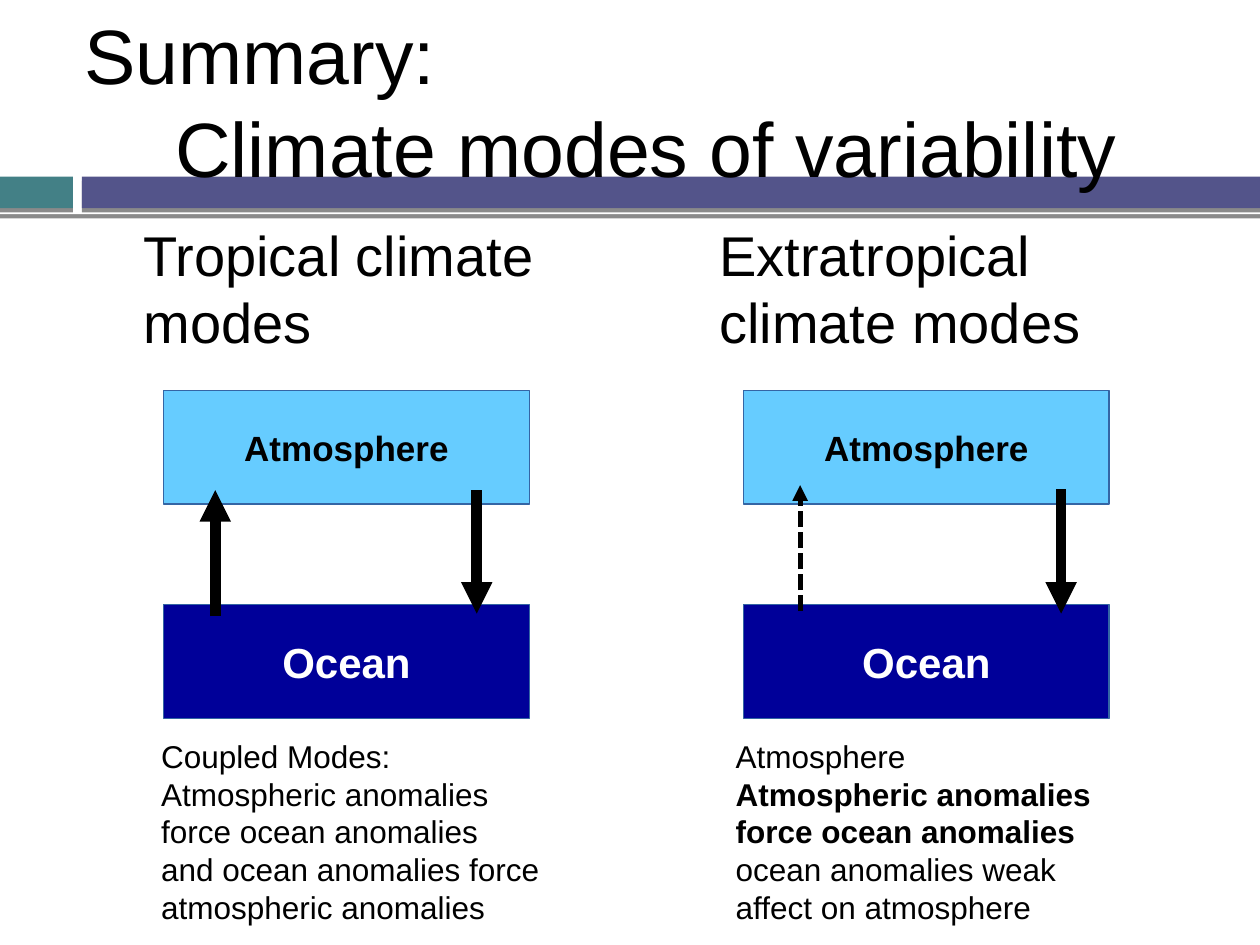
from lxml.etree import SubElement
from pptx import Presentation
from pptx.dml.color import RGBColor
from pptx.enum.dml import MSO_LINE
from pptx.enum.shapes import MSO_CONNECTOR, MSO_SHAPE
from pptx.enum.text import MSO_ANCHOR, MSO_AUTO_SIZE, PP_ALIGN
from pptx.oxml.ns import qn
from pptx.util import Cm, Pt


def color(value):
    return RGBColor.from_string(value)


def add_element(parent, tag, **attributes):
    return SubElement(parent, qn(tag), attributes)


class ClimateSlide:
    font = "Arial"
    black = "000000"
    white = "FFFFFF"
    outline = "3465A4"

    def __init__(self, page):
        self.page = page

    def add_text(self, para, text, size, ink=black, bold=False):
        for number, line in enumerate(text.split("\n")):
            if number:
                para.add_line_break()
            span = para.add_run()
            span.text = line
            span.font.name = self.font
            span.font.size = Pt(size)
            span.font.bold = bold
            span.font.color.rgb = color(ink)

    def place(self, index, left, top, width, height):
        """Position a template placeholder above the bars and clear its margins."""
        holder = self.page.placeholders[index]
        holder.left, holder.top = Cm(left), Cm(top)
        holder.width, holder.height = Cm(width), Cm(height)
        holder.element.getparent().append(holder.element)
        frame = holder.text_frame
        frame.auto_size = MSO_AUTO_SIZE.NONE
        frame.margin_left = frame.margin_right = 0
        frame.margin_top = frame.margin_bottom = 0
        return frame

    def title(self, first, second):
        frame = self.place(0, 1.7, 0.28, 22.66, 3.48)
        frame.vertical_anchor = MSO_ANCHOR.MIDDLE
        lines = ((frame.paragraphs[0], first, PP_ALIGN.LEFT),
                 (frame.add_paragraph(), second, PP_ALIGN.CENTER))
        for para, text, alignment in lines:
            para.alignment = alignment
            self.add_text(para, text, 44)

    def heading(self, index, left, text):
        para = self.place(index, left, 4.45, 11.05, 12.5).paragraphs[0]
        props = para._p.get_or_add_pPr()
        props.set("marL", str(Cm(1.19)))
        props.set("indent", str(Cm(-0.89)))
        bullet_color = add_element(props, "a:buClr")
        add_element(bullet_color, "a:srgbClr", val=self.white)
        add_element(props, "a:buSzPct", val="45000")
        add_element(props, "a:buChar", char="●")
        para.space_before = Pt(0)
        self.add_text(para, text, 32)

    def rectangle(self, left, top, width, height, fill):
        box = self.page.shapes.add_shape(
            MSO_SHAPE.RECTANGLE, Cm(left), Cm(top), Cm(width), Cm(height))
        box.shadow.inherit = False
        box.fill.solid()
        box.fill.fore_color.rgb = color(fill)
        return box

    def bar(self, left, top, width, height, fill):
        box = self.rectangle(left, top, width, height, fill)
        box.line.fill.background()
        effects = box.element.spPr.find(qn("a:effectLst"))
        shadow = add_element(effects, "a:outerShdw", blurRad="0", dist=str(Pt(2.4)),
                             dir="5400000", algn="ctr", rotWithShape="0")
        tint = add_element(shadow, "a:srgbClr", val=self.black)
        add_element(tint, "a:alpha", val="45000")

    def block(self, left, top, text, size, fill, ink):
        box = self.rectangle(left, top, 7.37, 2.29, fill)
        box.line.color.rgb = color(self.outline)
        box.line.width = Pt(0.75)
        frame = box.text_frame
        frame.word_wrap = False
        frame.vertical_anchor = MSO_ANCHOR.MIDDLE
        para = frame.paragraphs[0]
        para.alignment = PP_ALIGN.CENTER
        self.add_text(para, text, size, ink, bold=True)

    def arrow(self, x, start, end, width=6, dash=None):
        arrow = self.page.shapes.add_connector(
            MSO_CONNECTOR.STRAIGHT, Cm(x), Cm(start), Cm(x), Cm(end))
        arrow.line.color.rgb = color(self.black)
        arrow.line.width = Pt(width)
        if dash is not None:
            arrow.line.dash_style = dash
        props = arrow.element.spPr
        add_element(props.find(qn("a:ln")), "a:tailEnd", type="triangle")
        add_element(props, "a:effectLst")

    def caption(self, left, width, lines):
        box = self.page.shapes.add_textbox(Cm(left), Cm(14.73), Cm(width), Cm(4.52))
        frame = box.text_frame
        frame.word_wrap = True
        for number, (text, bold) in enumerate(lines):
            para = frame.add_paragraph() if number else frame.paragraphs[0]
            self.add_text(para, text, 18, bold=bold)


def main():
    deck = Presentation()
    deck.slide_width, deck.slide_height = Cm(25.4), Cm(19.05)
    slide = ClimateSlide(deck.slides.add_slide(deck.slide_layouts[3]))

    # Banner
    slide.bar(0, 3.43, 25.4, 0.89, "FFFFFF")
    slide.bar(0, 3.56, 1.47, 0.64, "438086")
    slide.bar(1.65, 3.56, 23.75, 0.64, "53548A")

    # Title and column headings
    slide.title("Summary:", "Climate modes of variability")
    slide.heading(1, 1.7, "Tropical climate modes")
    slide.heading(2, 13.31, "Extratropical climate modes")

    # Atmosphere and ocean blocks
    for left in (3.3, 14.99):
        slide.block(left, 7.87, "Atmosphere", 20, "66CCFF", "000000")
        slide.block(left, 12.19, "Ocean", 24, "000099", "FFFFFF")

    # Forcing arrows
    slide.arrow(4.34, 12.42, 9.88)
    slide.arrow(9.61, 9.88, 12.37)
    slide.arrow(16.13, 12.32, 9.78, width=3, dash=MSO_LINE.SQUARE_DOT)
    slide.arrow(21.39, 9.86, 12.37)

    # Captions
    slide.caption(3, 8.31, [
        ("Coupled Modes:", False),
        ("Atmospheric anomalies", False),
        ("force ocean anomalies", False),
        ("and ocean anomalies force", False),
        ("atmospheric anomalies", False),
    ])
    slide.caption(14.58, 8.15, [
        ("Atmosphere", False),
        ("Atmospheric anomalies", True),
        ("force ocean anomalies", True),
        ("ocean anomalies weak\naffect on atmosphere", False),
    ])

    deck.save("out.pptx")


if __name__ == "__main__":
    main()
